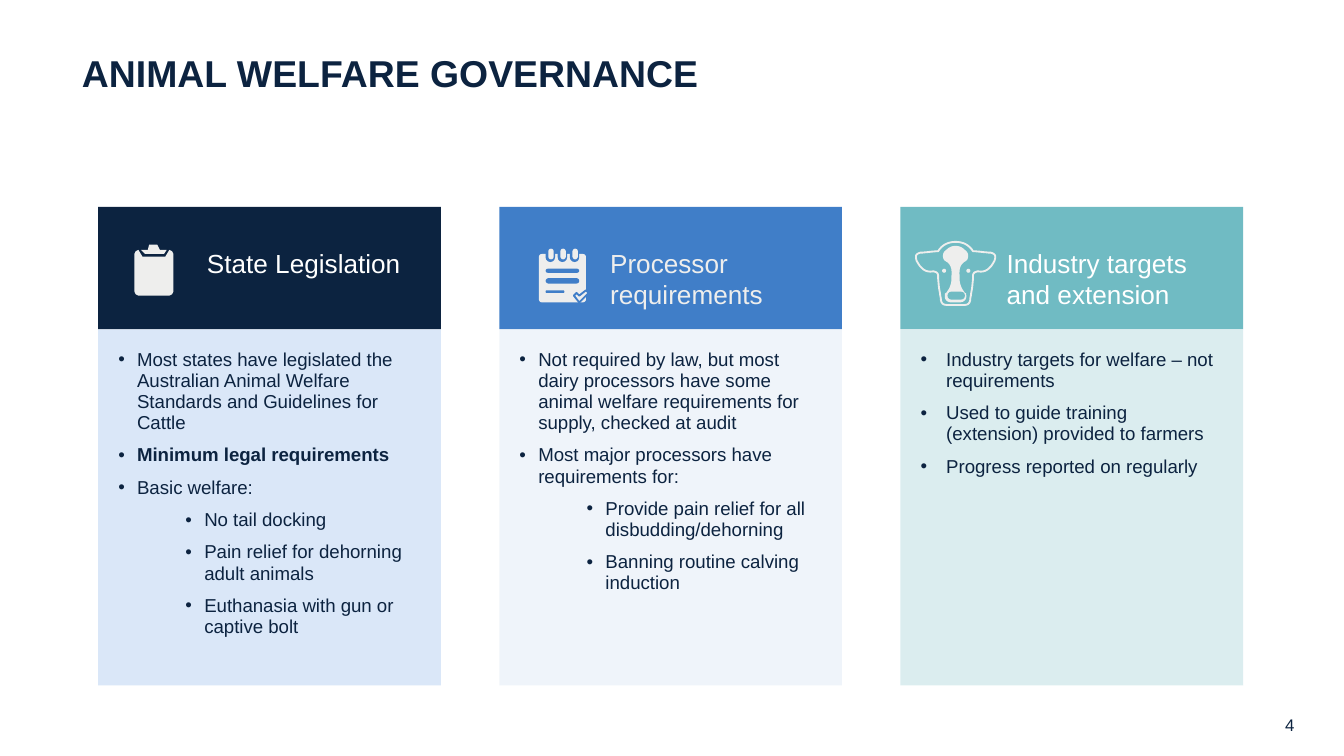
from dataclasses import dataclass

from lxml import etree
from pptx import Presentation
from pptx.dml.color import RGBColor
from pptx.enum.shapes import MSO_SHAPE
from pptx.enum.text import MSO_ANCHOR, MSO_AUTO_SIZE, PP_ALIGN
from pptx.oxml.ns import qn
from pptx.util import Inches, Pt

RECT, ROUNDED, OVAL = MSO_SHAPE.RECTANGLE, MSO_SHAPE.ROUNDED_RECTANGLE, MSO_SHAPE.OVAL
TOP = MSO_ANCHOR.TOP
LEFT, RIGHT = PP_ALIGN.LEFT, PP_ALIGN.RIGHT
UNITS = 1000  # freeform units per inch


@dataclass(frozen=True)
class Theme:
    font: str = "Arial"
    navy: str = "0C2340"
    blue: str = "407EC8"
    teal: str = "70BBC3"
    white: str = "FFFFFF"
    icon: str = "EEEEED"
    title_size: int = 20
    heading_size: int = 14
    body_size: int = 10
    number_size: int = 9


THEME = Theme()
SLIDE_WIDTH = 10
SLIDE_HEIGHT = SLIDE_WIDTH * 9 / 16
CARD_LEFT, LAST_CARD_LEFT, CARD_WIDTH = 0.73, 6.7, 2.55
CARD_PITCH = (LAST_CARD_LEFT - CARD_LEFT) / 2
HEADER_TOP, HEADER_HEIGHT, BODY_HEIGHT = 1.54, 0.91, 2.65

# Each card: header colour, body colour, opacity %, heading, heading left,
# heading height, heading colour, bullet indent, bullets as (level, text, bold)
CARDS = [
    (THEME.navy, "A4C4EE", 40, "State Legislation", 1.46, 0.31, THEME.white, 0.14, [
        (0, "Most states have legislated the Australian Animal Welfare "
            "Standards and Guidelines for Cattle", False),
        (0, "Minimum legal requirements", True),
        (0, "Basic welfare:", False),
        (1, "No tail docking", False),
        (1, "Pain relief for dehorning adult animals", False),
        (1, "Euthanasia with gun or captive bolt", False)]),
    (THEME.blue, "D9E5F4", 40, "Processor requirements", 4.46, 0.55, THEME.icon, 0.14, [
        (0, "Not required by law, but most dairy processors have some animal "
            "welfare requirements for supply, checked at audit", False),
        (0, "Most major processors have requirements for:", False),
        (1, "Provide pain relief for all disbudding/dehorning", False),
        (1, "Banning routine calving induction", False)]),
    (THEME.teal, "B8DDE1", 50, "Industry targets and extension", 7.41, 0.55, THEME.white, 0.19, [
        (0, "Industry targets for welfare – not requirements", False),
        (0, "Used to guide training (extension) provided to farmers", False),
        (0, "Progress reported on regularly", False)]),
]

# Left halves of the cow icon: a start point, then Bezier segments
COW_AXIS = 7.11
HEAD = [(7.11, 1.8),
        [(7.06, 1.8), (7.01, 1.82), (6.98, 1.87)],
        [(6.94, 1.87), (6.89, 1.88), (6.85, 1.88)],
        [(6.81, 1.89), (6.81, 1.91), (6.82, 1.94)],
        [(6.85, 2.0), (6.89, 2.03), (6.94, 2.02)],
        [(6.96, 2.02), (6.98, 2.03), (6.98, 2.05)],
        [(6.98, 2.11), (6.99, 2.16), (7.0, 2.22)],
        [(7.0, 2.26), (7.02, 2.27), (7.05, 2.27)]]
BLAZE = [(7.11, 1.83),
         [(7.08, 1.83), (7.06, 1.84), (7.04, 1.86)],
         [(7.01, 1.88), (7.01, 1.92), (7.03, 1.94)],
         [(7.09, 1.97), (7.08, 2.02), (7.08, 2.07)],
         [(7.08, 2.11), (7.07, 2.14), (7.04, 2.18)],
         [(7.03, 2.18), (7.03, 2.19), (7.03, 2.21)],
         [(7.03, 2.23), (7.05, 2.25), (7.08, 2.25)]]


def color(value):
    return RGBColor.from_string(value)


def paint(shape, fill, line=None, weight=1):
    shape.shadow.inherit = False
    if fill:
        shape.fill.solid()
        shape.fill.fore_color.rgb = color(fill)
    else:
        shape.fill.background()
    if line:
        shape.line.color.rgb = color(line)
        shape.line.width = Pt(weight)
    else:
        shape.line.fill.background()
    return shape


def add_block(shapes, kind, left, top, width, height, fill, opacity=100):
    block = shapes.add_shape(kind, Inches(left), Inches(top), Inches(width), Inches(height))
    paint(block, fill)
    if kind == ROUNDED:
        block.adjustments[0] = 0.5
    if opacity < 100:
        tint = block.fill._xPr.find(f"{qn('a:solidFill')}/{qn('a:srgbClr')}")
        etree.SubElement(tint, qn("a:alpha"), val=str(opacity * 1000))
    return block


def add_outline(shapes, points, fill, line=None, weight=1):
    scaled = [(x * UNITS, y * UNITS) for x, y in points]
    builder = shapes.build_freeform(*scaled[0], scale=Inches(1) / UNITS)
    builder.add_line_segments(scaled[1:], close=True)
    return paint(builder.convert_to_shape(), fill, line, weight)


def mirrored_curve(half, axis, steps=8):
    points = [half[0]]
    for first, second, end in half[1:]:
        start = points[-1]
        for step in range(1, steps + 1):
            t = step / steps
            u = 1 - t
            points.append(tuple(u**3 * a + 3 * u * u * t * b + 3 * u * t * t * c + t**3 * d
                                for a, b, c, d in zip(start, first, second, end)))
    return points + [(2 * axis - x, y) for x, y in reversed(points[1:])]


def set_frame(box, insets):
    frame = box.text_frame
    frame.word_wrap = True
    frame.auto_size = MSO_AUTO_SIZE.NONE
    frame.vertical_anchor = TOP
    frame.margin_left, frame.margin_top, frame.margin_right, frame.margin_bottom = map(Inches, insets)
    return frame


def write(para, text, size, fill=THEME.navy, bold=False, align=LEFT):
    para.alignment = align
    span = para.add_run()
    span.text = text
    span.font.name = THEME.font
    span.font.size = Pt(size)
    span.font.bold = bold
    span.font.color.rgb = color(fill)


def add_label(page, text, left, top, width, height, insets, size, **style):
    box = page.shapes.add_textbox(Inches(left), Inches(top), Inches(width), Inches(height))
    write(set_frame(box, insets).paragraphs[0], text, size, **style)


def add_bullets(box, items, indent):
    frame = set_frame(box, [0.15] * 4)
    for index, (level, text, bold) in enumerate(items):
        para = frame.add_paragraph() if index else frame.paragraphs[0]
        para.level = level
        para.line_spacing = 0.94
        para.space_after = Pt(6)
        props = para._p.get_or_add_pPr()
        props.set("marL", str(Inches(indent + 0.5 * level)))
        props.set("indent", str(-Inches(indent)))
        tint = etree.SubElement(props, qn("a:buClr"))
        etree.SubElement(tint, qn("a:srgbClr"), val=THEME.navy)
        etree.SubElement(props, qn("a:buFont"), typeface=THEME.font)
        etree.SubElement(props, qn("a:buChar"), char="•")
        write(para, text, THEME.body_size, bold=bold)


def add_card(page, index, card):
    header, body, opacity, heading, left, height, ink, indent, items = card
    card_left = CARD_LEFT + index * CARD_PITCH
    panel = add_block(page.shapes, RECT, card_left, HEADER_TOP + HEADER_HEIGHT,
                      CARD_WIDTH, BODY_HEIGHT, body, opacity)
    add_bullets(panel, items, indent)
    add_block(page.shapes, RECT, card_left, HEADER_TOP, CARD_WIDTH, HEADER_HEIGHT, header)
    add_label(page, heading, left, 1.8, 1.76, height, (0.08, 0.04, 0.08, 0.04),
              THEME.heading_size, fill=ink)


def add_clipboard(page):
    shapes = page.shapes.add_group_shape().shapes
    add_outline(shapes, [(1.03, 1.86), (1.06, 1.91), (1.23, 1.91), (1.26, 1.86), (1.28, 1.87),
                         (1.29, 1.89), (1.29, 2.17), (1.28, 2.19), (1.26, 2.2), (1.03, 2.2),
                         (1.01, 2.19), (1, 2.17), (1, 1.89), (1.01, 1.87)], THEME.icon)
    add_outline(shapes, [(1.05, 1.86), (1.1, 1.86), (1.11, 1.82), (1.17, 1.82), (1.19, 1.86),
                         (1.24, 1.86), (1.22, 1.89), (1.08, 1.89)], THEME.icon)


def add_notepad(page):
    shapes = page.shapes.add_group_shape().shapes
    sheet = add_block(shapes, ROUNDED, 4.01, 1.89, 0.35, 0.36, THEME.icon)
    sheet.adjustments[0] = 0.06
    # Binding rings, each in a slot
    for ring in (4.08, 4.17, 4.26):
        add_block(shapes, ROUNDED, ring - 0.02, 1.85, 0.07, 0.1, THEME.blue)
        add_block(shapes, ROUNDED, ring, 1.85, 0.04, 0.08, THEME.icon)
    # Written lines
    for top, width, height in ((2, 0.25, 0.03), (2.07, 0.25, 0.04), (2.16, 0.14, 0.02)):
        add_block(shapes, ROUNDED, 4.06, top, width, height, THEME.blue)
    # Tick, with a blue edge that clears the sheet
    tick = [(4.27, 2.2), (4.29, 2.18), (4.31, 2.2), (4.36, 2.16), (4.38, 2.18), (4.31, 2.25)]
    add_outline(shapes, tick, THEME.icon, THEME.blue, 1)


def add_cow(page):
    shapes = page.shapes.add_group_shape().shapes
    add_outline(shapes, mirrored_curve(HEAD, COW_AXIS), None, THEME.icon)
    add_outline(shapes, mirrored_curve(BLAZE, COW_AXIS), THEME.icon)
    add_block(shapes, ROUNDED, 7.05, 2.17, 0.13, 0.06, THEME.teal)
    for eye in (7.01, 7.19):
        add_block(shapes, OVAL, eye, 2, 0.03, 0.03, THEME.icon)


def add_title(page, text):
    title = page.shapes.title
    title.left, title.top, title.width, title.height = map(Inches, (0.51, 0.17, 7.48, 1.09))
    frame = set_frame(title, (0.1, 0.2, 0.1, 0.1))
    write(frame.paragraphs[0], text, THEME.title_size, bold=True)


def main():
    deck = Presentation()
    deck.slide_width, deck.slide_height = Inches(SLIDE_WIDTH), Inches(SLIDE_HEIGHT)
    page = deck.slides.add_slide(deck.slide_layouts[5])
    add_title(page, "ANIMAL WELFARE GOVERNANCE")
    # Cards
    for index, card in enumerate(CARDS):
        add_card(page, index, card)
    # Header icons
    add_clipboard(page)
    add_notepad(page)
    add_cow(page)
    # Page number
    add_label(page, "4", 8.94, 5.27, 0.79, 0.3, (0.1, 0.05, 0.1, 0.05),
              THEME.number_size, align=RIGHT)
    deck.save("out.pptx")


if __name__ == "__main__":
    main()
